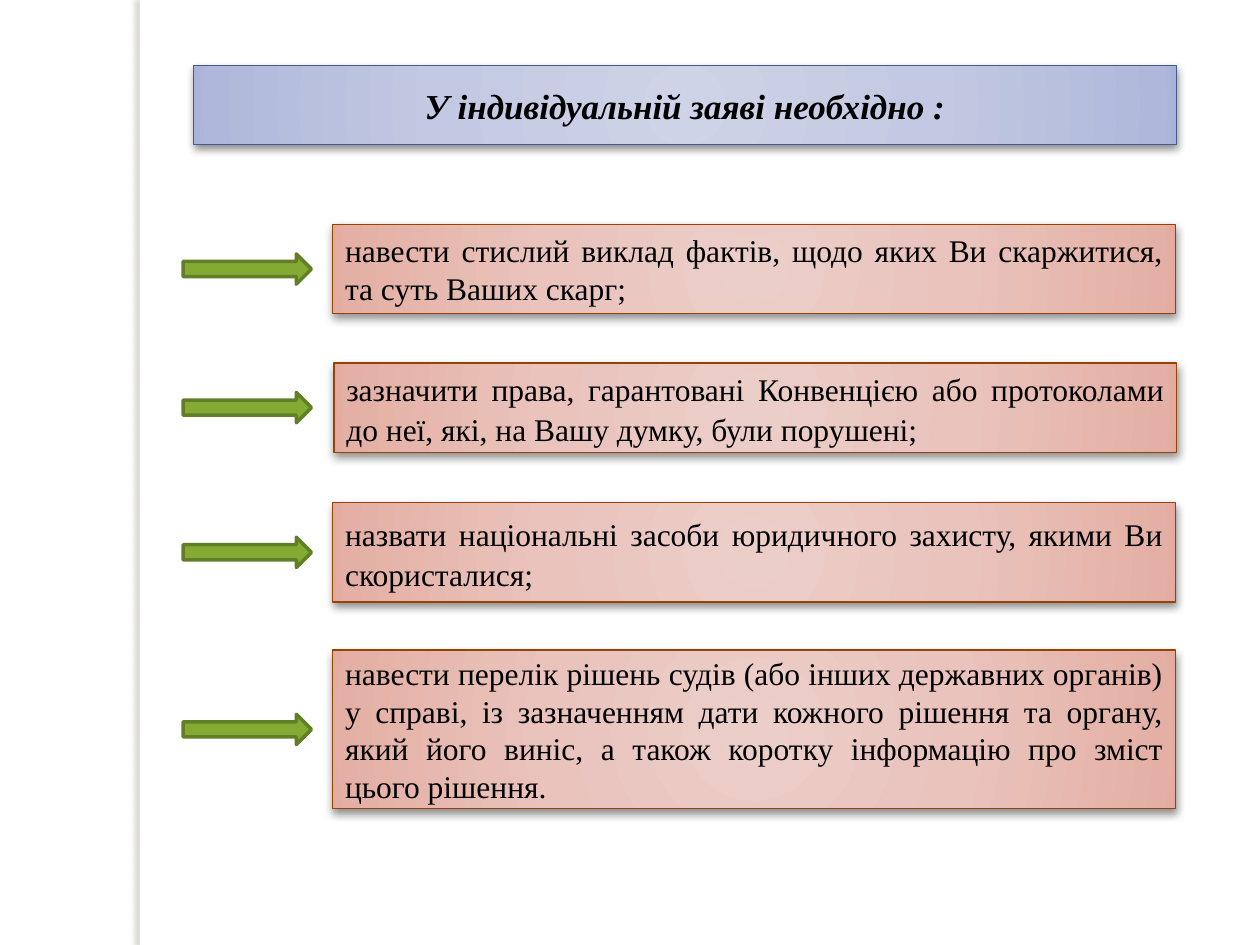
from pptx import Presentation
from pptx.dml.color import RGBColor
from pptx.enum.shapes import MSO_SHAPE
from pptx.enum.text import MSO_ANCHOR, PP_ALIGN
from pptx.oxml import parse_xml
from pptx.oxml.ns import nsdecls, qn
from pptx.util import Pt

FONT = "Times New Roman"
WHITE = RGBColor(0xFF, 0xFF, 0xFF)
BLACK = RGBColor(0x00, 0x00, 0x00)
STRIP_SHADOW = RGBColor(0x73, 0x6F, 0x63)
BLUE_LINE = RGBColor(0x47, 0x5A, 0x8D)
RED_LINE = RGBColor(0x96, 0x43, 0x05)
GREEN = RGBColor(0x84, 0xAA, 0x33)
GREEN_LINE = RGBColor(0x62, 0x7E, 0x26)
BLUES = [(0, RGBColor(0xCF, 0xD3, 0xE7)), (50, RGBColor(0xC3, 0xC9, 0xE2)),
         (97, RGBColor(0xAF, 0xB8, 0xDA)), (100, RGBColor(0xA8, 0xB2, 0xDA))]
REDS = [(0, RGBColor(0xEC, 0xCE, 0xC9)), (50, RGBColor(0xE9, 0xC3, 0xBC)),
        (97, RGBColor(0xE4, 0xAF, 0xA4)), (100, RGBColor(0xE4, 0xA8, 0x9B))]

TITLE = "У індивідуальній заяві необхідно :"
ITEMS = [
    (190.1, 128.2, 51.1, 1.0,
     "навести стислий виклад фактів, щодо яких Ви скаржитися, та суть Ваших скарг;"),
    (190.8, 207.4, 51.1, 1.07,
     "зазначити права, гарантовані Конвенцією або протоколами до неї, які, на Вашу "
     "думку, були порушені;"),
    (190.1, 287.2, 56.9, 1.07,
     "назвати національні засоби юридичного захисту, якими Ви скористалися;"),
    (190.1, 371.5, 90.7, 1.0,
     "навести перелік рішень судів (або інших державних органів) у справі, із "
     "зазначенням дати кожного рішення та органу, який його виніс, а також коротку "
     "інформацію про зміст цього рішення."),
]


def add_box(s, kind, left, top, width, height):
    """Add a preset shape without a shadow."""
    sp = s.shapes.add_shape(kind, Pt(left), Pt(top), Pt(width), Pt(height))
    sp.shadow.inherit = False
    return sp


def add_shadow(sp, color, alpha, blur, dist, angle):
    """Give a shape an outer shadow."""
    effects = sp._element.spPr.find(qn("a:effectLst"))
    effects.append(parse_xml(
        f'<a:outerShdw {nsdecls("a")} blurRad="{Pt(blur)}" dist="{Pt(dist)}" '
        f'dir="{angle * 60000}" algn="ctr" rotWithShape="0"><a:srgbClr val="{color}">'
        f'<a:alpha val="{alpha * 1000}"/></a:srgbClr></a:outerShdw>'))


def fill_radial(sp, stops):
    """Fill a shape with a gradient running outwards from its centre."""
    sp.fill.background()
    spPr = sp._element.spPr
    marks = "".join(f'<a:gs pos="{pos * 1000}"><a:srgbClr val="{color}"/></a:gs>'
                    for pos, color in stops)
    spPr.replace(spPr.find(qn("a:noFill")), parse_xml(
        f'<a:gradFill {nsdecls("a")} rotWithShape="1"><a:gsLst>{marks}</a:gsLst>'
        '<a:path path="circle"><a:fillToRect l="50000" t="50000" r="50000" b="50000"/>'
        '</a:path></a:gradFill>'))


def add_panel(s, box, text, stops, line, size, align, spacing=1.0, strong=False):
    """Add a gradient panel with one paragraph of text."""
    sp = add_box(s, MSO_SHAPE.RECTANGLE, *box)
    fill_radial(sp, stops)
    sp.line.color.rgb = line
    sp.line.width = Pt(0.75)
    add_shadow(sp, BLACK, 43, 5, 2, 90)
    tf = sp.text_frame
    tf.word_wrap = True
    tf.vertical_anchor = MSO_ANCHOR.MIDDLE
    p = tf.paragraphs[0]
    p.alignment = align
    p.line_spacing = spacing
    r = p.add_run()
    r.text = text
    r.font.name = FONT
    r.font.size = Pt(size)
    r.font.color.rgb = BLACK
    r.font.bold = r.font.italic = strong


def add_strip(s, left, top, width, height):
    """Add the white vertical strip that casts a shadow to the left."""
    sp = add_box(s, MSO_SHAPE.RECTANGLE, left, top, width, height)
    sp.fill.solid()
    sp.fill.fore_color.rgb = WHITE
    sp.line.fill.background()
    add_shadow(sp, STRIP_SHADOW, 25, 3, 3, 180)


def add_arrow(s, left, top, width, height):
    """Add a green arrow pointing right."""
    sp = add_box(s, MSO_SHAPE.RIGHT_ARROW, left, top, width, height)
    sp.fill.solid()
    sp.fill.fore_color.rgb = GREEN
    sp.line.color.rgb = GREEN_LINE
    sp.line.width = Pt(2)


def add_item(s, left, top, width, height, text, spacing):
    """Add a requirement panel and the arrow centred beside it."""
    add_panel(s, (left, top, width, height), text, REDS, RED_LINE, 18,
              PP_ALIGN.JUSTIFY, spacing)
    arrow_height = 17.3
    add_arrow(s, 104.6, top + (height - arrow_height) / 2, 73.4, arrow_height)


def main():
    """Build the slide and save it."""
    prs = Presentation()
    prs.slide_width, prs.slide_height = Pt(720), Pt(540)
    s = prs.slides.add_slide(prs.slide_layouts[6])
    add_strip(s, 79.9, 0, 5.8, 540)
    add_panel(s, (110.6, 37.4, 561.6, 45.4), TITLE, BLUES, BLUE_LINE, 20,
              PP_ALIGN.CENTER, strong=True)
    for left, top, height, spacing, text in ITEMS:
        add_item(s, left, top, 481.7, height, text, spacing)
    prs.save("out.pptx")


if __name__ == "__main__":
    main()
